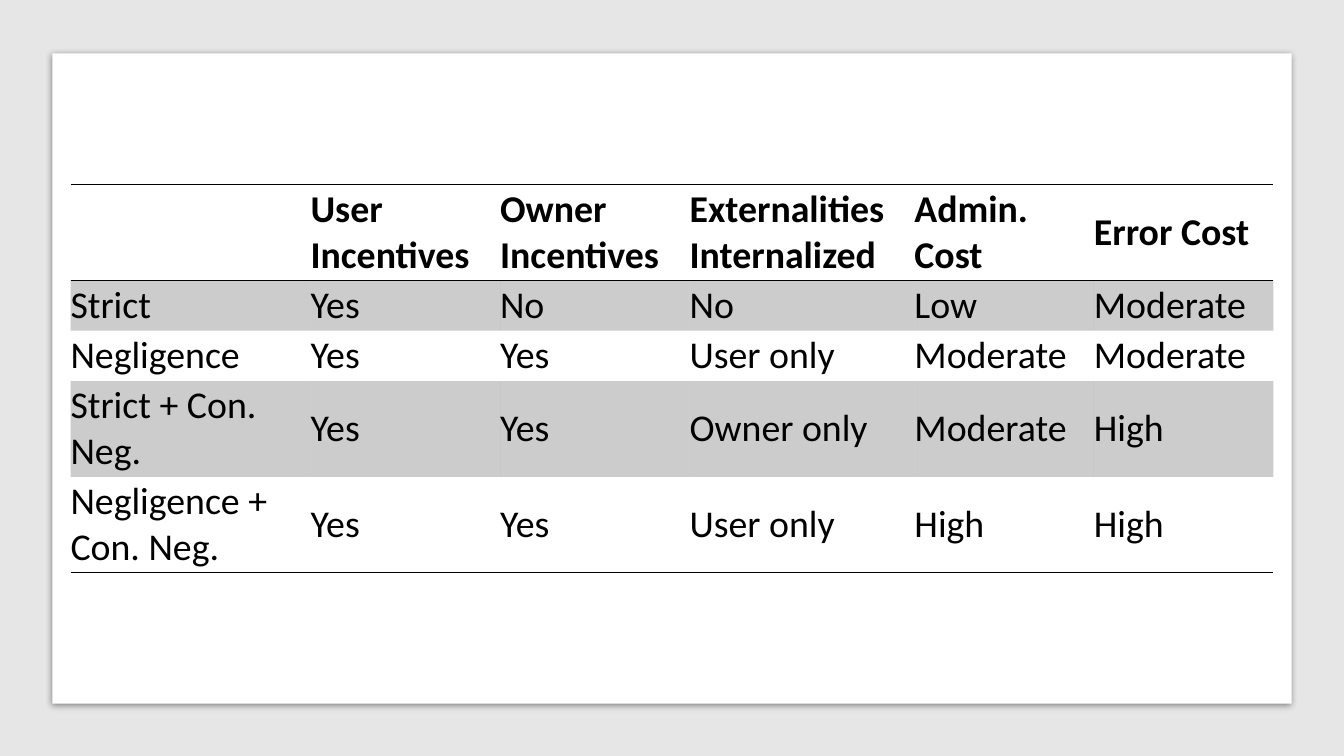
"""Build a slide with a table comparing liability rules."""
from dataclasses import dataclass

from lxml.etree import SubElement
from pptx import Presentation
from pptx.dml.color import RGBColor as RGB
from pptx.enum.shapes import MSO_SHAPE as SHAPE
from pptx.enum.text import MSO_ANCHOR as ANCHOR
from pptx.oxml.ns import qn
from pptx.util import Inches, Pt


@dataclass(frozen=True)
class Theme:
    ink: str = "000000"
    paper: str = "FFFFFF"
    backdrop: str = "E7E6E6"
    font: str = "Calibri"
    size: float = 27
    rule: float = 1
    band_alpha: int = 20
    shadow_alpha: int = 43


theme = Theme()


def write(tf, text, size=theme.size, color=theme.ink, bold=False):
    r = tf.paragraphs[0].add_run()
    r.text = text
    r.font.name = theme.font
    r.font.size = Pt(size)
    r.font.bold = bold
    r.font.color.rgb = RGB.from_string(color)


def add(parent, tag, **attrs):
    return SubElement(parent, qn(tag), {k: str(v) for k, v in attrs.items()})


prs = Presentation()
prs.slide_width = Inches(13.33)
prs.slide_height = Inches(7.5)
s = prs.slides.add_slide(prs.slide_layouts[6])

panels = [
    ((0, 0, 13.33, 7.5), theme.backdrop),
    ((0.52, 0.53, 12.29, 6.45), theme.paper),
]
for box, color in panels:
    sp = s.shapes.add_shape(SHAPE.RECTANGLE, *map(Inches, box))
    sp.shadow.inherit = False
    sp.fill.solid()
    sp.fill.fore_color.rgb = RGB.from_string(color)
    sp.line.fill.background()

effects = sp.element.spPr.find(qn("a:effectLst"))
shadow = add(effects, "a:outerShdw", blurRad=Pt(5), dist=Pt(1.4),
             dir=90 * 60000, algn="ctr", rotWithShape=0)
shade = add(shadow, "a:srgbClr", val=theme.ink)
add(shade, "a:alpha", val=theme.shadow_alpha * 1000)

rows = [
    ["", "User Incentives", "Owner Incentives", "Externalities Internalized", "Admin. Cost", "Error Cost"],
    ["Strict", "Yes", "No", "No", "Low", "Moderate"],
    ["Negligence", "Yes", "Yes", "User only", "Moderate", "Moderate"],
    ["Strict + Con. Neg.", "Yes", "Yes", "Owner only", "Moderate", "High"],
    ["Negligence + Con. Neg.", "Yes", "Yes", "User only", "High", "High"],
]
widths = [2.38, 1.88, 1.88, 2.23, 1.78, 1.78]
heights = [0.95, 0.5, 0.5, 0.95, 0.95]
ruled_sides = {0: ["a:lnT", "a:lnB"], len(rows) - 1: ["a:lnB"]}

frame = s.shapes.add_table(len(rows), len(widths), Inches(0.7), Inches(1.83),
                           Inches(sum(widths)), Inches(sum(heights)))
table = frame.table
no_style_no_grid = "{2D5ABB26-0587-4C30-8999-92F81FD0307C}"
next(frame.element.iter(qn("a:tableStyleId"))).text = no_style_no_grid
for column, width in zip(table.columns, widths):
    column.width = Inches(width)

for i, (row, height) in enumerate(zip(rows, heights)):
    table.rows[i].height = Inches(height)
    for j, text in enumerate(row):
        cell = table.cell(i, j)
        cell.vertical_anchor = ANCHOR.MIDDLE
        cell.margin_left = cell.margin_right = 0
        cell.margin_top = cell.margin_bottom = 0
        if text:
            write(cell.text_frame, text, bold=i == 0)
        tcPr = cell._tc.get_or_add_tcPr()
        for side in ruled_sides.get(i, []):
            ln = add(tcPr, side, w=Pt(theme.rule))
            add(add(ln, "a:solidFill"), "a:srgbClr", val=theme.ink)
        if i % 2:
            cell.fill.solid()
            cell.fill.fore_color.rgb = RGB.from_string(theme.ink)
            band = next(tcPr.iter(qn("a:srgbClr")))
            add(band, "a:alpha", val=theme.band_alpha * 1000)
        else:
            cell.fill.background()

prs.save("out.pptx")
